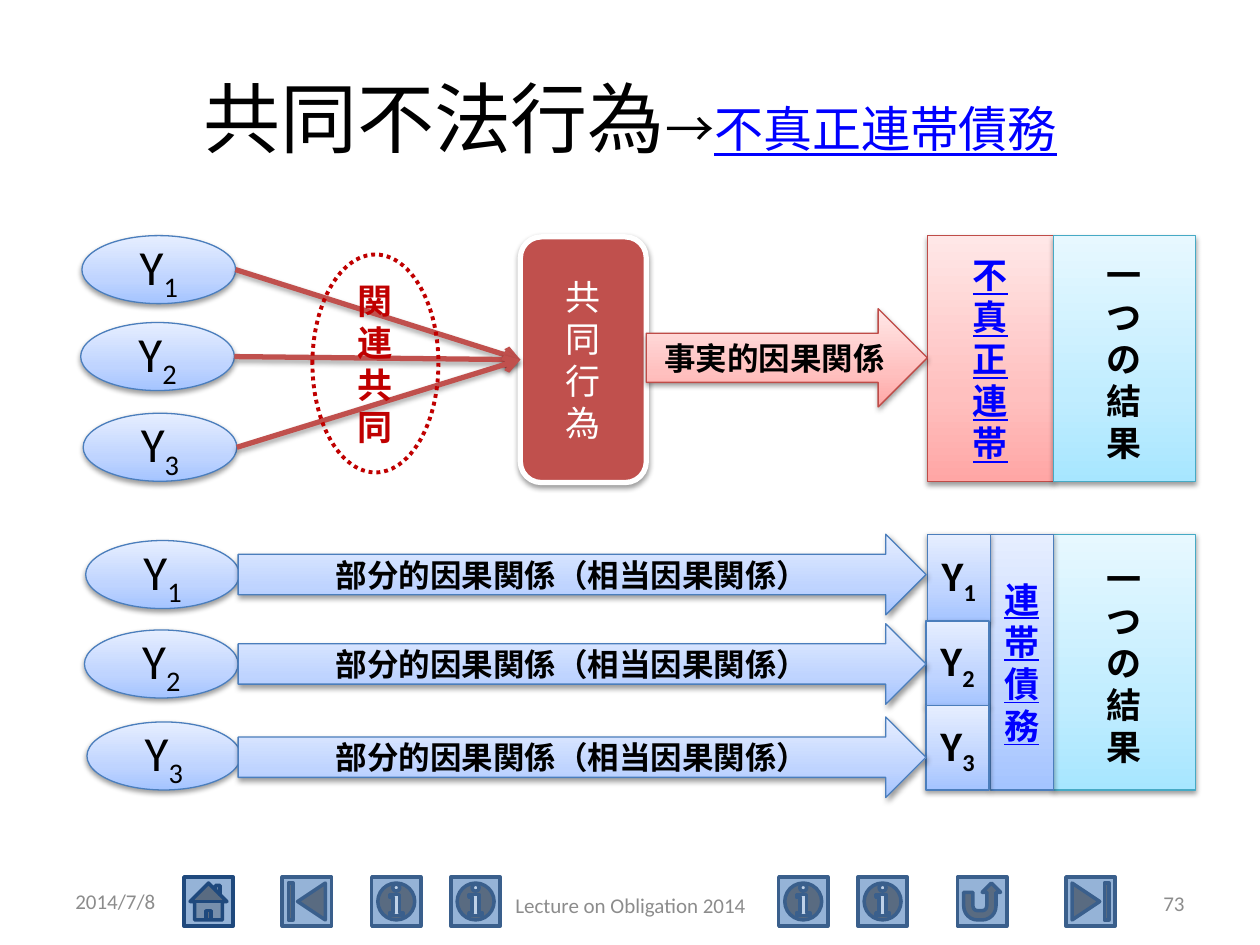
"""Build a slide comparing joint tort causation with partial causation."""
from dataclasses import dataclass
from typing import Optional

from pptx import Presentation
from pptx import util as u
from pptx.dml.color import RGBColor
from pptx.enum import dml, shapes, text
from pptx.oxml import parse_xml
from pptx.oxml.ns import nsdecls, qn

KIND = shapes.MSO_SHAPE
ALIGN = text.PP_ALIGN


@dataclass(frozen=True)
class Theme:
    font: str = "Calibri"
    black: str = "000000"
    white: str = "FFFFFF"
    link: str = "0000FF"
    muted: str = "8C8C8C"
    red: str = "C0504D"
    dark_red: str = "C00000"
    button: str = "95B3D7"
    button_line: str = "3A5F8C"
    home_line: str = "1F497D"
    title: int = 44
    subtitle: int = 28
    actor: int = 28
    share: int = 24
    body: int = 20
    label: int = 18
    footer: int = 12


@dataclass(frozen=True)
class Paint:
    """Fill stops from bottom to top, with an outline."""
    stops: tuple[str, ...]
    line: str
    width: float = 0.75
    dash: Optional[dml.MSO_LINE] = None
    shadow: bool = True


@dataclass(frozen=True)
class Words:
    """Label text with its type style and optional subscript."""
    content: str
    size: int
    color: str = Theme.black
    bold: bool = True
    underline: bool = False
    subscript: str = ""


@dataclass(frozen=True)
class Box:
    """Preset shape with place, paint and words."""
    kind: shapes.MSO_SHAPE
    left: float
    top: float
    width: float
    height: float
    paint: Paint
    words: Optional[Words] = None


THEME = Theme()
BLUE = Paint(("A4C4FF", "BFD4FF", "E6EEFF"), "4B7EBC")
PINK = Paint(("FFA6A5", "FFC0BF", "FFE7E7"), "BF4C48")
AQUA = Paint(("A7E6FF", "C1EDFF", "E7F8FF"), "46AAC5")
SOLID_RED = Paint((THEME.red,), THEME.white, 3)
DOTTED = Paint((), THEME.dark_red, 2.25, dml.MSO_LINE.ROUND_DOT, False)
BUTTON = Paint((THEME.button,), THEME.button_line, 2, shadow=False)
HOME = Paint((THEME.button,), THEME.home_line, 2, shadow=False)

BUTTONS = (
    (KIND.ACTION_BUTTON_HOME, 1.46, HOME),
    (KIND.ACTION_BUTTON_BEGINNING, 2.24, BUTTON),
    (KIND.ACTION_BUTTON_INFORMATION, 2.95, BUTTON),
    (KIND.ACTION_BUTTON_INFORMATION, 3.58, BUTTON),
    (KIND.ACTION_BUTTON_INFORMATION, 6.18, BUTTON),
    (KIND.ACTION_BUTTON_INFORMATION, 6.81, BUTTON),
    (KIND.ACTION_BUTTON_RETURN, 7.6, BUTTON),
    (KIND.ACTION_BUTTON_END, 8.46, BUTTON),
)
FOOTERS = (
    ("2014/7/8", 0.5, 6.95, 2.33, ALIGN.LEFT),
    ("Lecture on Obligation 2014", 3.42, 6.98, 3.17, ALIGN.CENTER),
    ("73", 7.17, 6.97, 2.33, ALIGN.RIGHT),
)
JOINT_ACTORS = ((0.65, 1.87), (0.64, 2.56), (0.66, 3.28))
PARTIAL_ACTORS = ((0.68, 4.29), (0.67, 5.0), (0.69, 5.73))
PARTIAL_ARROW_TOPS = (4.24, 4.95, 5.69)
SHARES = ((7.36, 4.24, 0.69), (7.35, 4.93, 0.67), (7.35, 5.6, 0.67))
ACTOR_WIDTH, ACTOR_HEIGHT = 1.22, 0.54


def style_run(run, size: int, color: str, bold=False, underline=False) -> None:
    """Format one run."""
    font = run.font
    font.name, font.size = THEME.font, u.Pt(size)
    font.bold, font.underline = bold, underline
    font.color.rgb = RGBColor.from_string(color)


def add_shadow(shape, opacity: int, distance: float) -> None:
    """Give a shape or connector a soft shadow straight below it."""
    properties = shape._element.spPr
    for effects in properties.findall(qn("a:effectLst")):
        properties.remove(effects)
    properties.append(parse_xml(
        f'<a:effectLst {nsdecls("a")}><a:outerShdw blurRad="{u.Pt(3.1)}" dist="{u.Pt(distance)}" '
        f'dir="5400000" rotWithShape="0"><a:srgbClr val="000000"><a:alpha val="{opacity * 1000}"/>'
        '</a:srgbClr></a:outerShdw></a:effectLst>'))


def apply_paint(shape, paint: Paint) -> None:
    """Apply fill, outline and shadow."""
    shape.shadow.inherit = False
    if not paint.stops:
        shape.fill.background()
    elif len(paint.stops) == 1:
        shape.fill.solid()
        shape.fill.fore_color.rgb = RGBColor.from_string(paint.stops[0])
    else:
        shape.fill.gradient()
        properties = shape._element.spPr
        stops = "".join(
            f'<a:gs pos="{position}"><a:srgbClr val="{color}"/></a:gs>'
            for position, color in zip((0, 35000, 100000), paint.stops))
        properties.replace(properties.find(qn("a:gradFill")), parse_xml(
            f'<a:gradFill {nsdecls("a")} rotWithShape="1"><a:gsLst>{stops}</a:gsLst>'
            '<a:lin ang="16200000" scaled="0"/></a:gradFill>'))
    shape.line.color.rgb = RGBColor.from_string(paint.line)
    shape.line.width = u.Pt(paint.width)
    if paint.dash:
        shape.line.dash_style = paint.dash
    if paint.shadow:
        add_shadow(shape, 38, 1.6)


def draw_box(slide, box: Box):
    """Draw a preset shape and its label."""
    shape = slide.shapes.add_shape(
        box.kind, *map(u.Inches, (box.left, box.top, box.width, box.height)))
    apply_paint(shape, box.paint)
    if box.words:
        words = box.words
        frame = shape.text_frame
        frame.vertical_anchor = text.MSO_ANCHOR.MIDDLE
        frame.word_wrap = not words.subscript
        paragraph = frame.paragraphs[0]
        paragraph.text = words.content.replace("\n", "\v")
        paragraph.alignment = ALIGN.CENTER
        if words.subscript:
            run = paragraph.add_run()
            run.text = words.subscript
            run._r.get_or_add_rPr().set("baseline", "-25000")
        for run in paragraph.runs:
            style_run(run, words.size, words.color, words.bold, words.underline)
    return shape


def draw_actor(slide, left: float, top: float, number: int) -> None:
    """Draw a numbered actor ellipse."""
    words = Words("Y", THEME.actor, bold=False, subscript=str(number))
    draw_box(slide, Box(KIND.OVAL, left, top, ACTOR_WIDTH, ACTOR_HEIGHT, BLUE, words))


def draw_link(slide, left: float, top: float, target) -> None:
    """Draw an arrow from an actor's right side to the joint act."""
    x, y = u.Inches(left + ACTOR_WIDTH), u.Inches(top + ACTOR_HEIGHT / 2)
    connector = slide.shapes.add_connector(shapes.MSO_CONNECTOR.STRAIGHT, x, y, x, y)
    connector.end_connect(target, 1)
    connector.line.color.rgb = RGBColor.from_string(THEME.red)
    connector.line.width = u.Pt(3)
    connector.line._get_or_add_ln().append(
        parse_xml(f'<a:tailEnd {nsdecls("a")} type="arrow"/>'))
    add_shadow(connector, 35, 1.8)


def draw_title(slide) -> None:
    """Fill the title placeholder."""
    title = slide.shapes.title
    title.left, title.top, title.width, title.height = map(u.Inches, (0.5, 0.3, 9, 1.25))
    title.text_frame.vertical_anchor = text.MSO_ANCHOR.MIDDLE
    paragraph = title.text_frame.paragraphs[0]
    paragraph.alignment = ALIGN.CENTER
    for content, size, color, underline in (
            ("共同不法行為", THEME.title, THEME.black, False),
            ("→", THEME.subtitle, THEME.black, False),
            ("不真正連帯債務", THEME.subtitle, THEME.link, True)):
        run = paragraph.add_run()
        run.text = content
        style_run(run, size, color, underline=underline)


def draw_footer(slide, content: str, left: float, top: float, width: float, alignment) -> None:
    """Draw one footer text."""
    frame = slide.shapes.add_textbox(*map(u.Inches, (left, top, width, 0.4))).text_frame
    frame.word_wrap = True
    frame.vertical_anchor = text.MSO_ANCHOR.MIDDLE
    frame.text = content
    frame.paragraphs[0].alignment = alignment
    style_run(frame.paragraphs[0].runs[0], THEME.footer, THEME.muted)


def draw_joint(slide) -> None:
    """Draw the upper flow: a joint act with one result."""
    for number, (left, top) in enumerate(JOINT_ACTORS, 1):
        draw_actor(slide, left, top, number)
    act = draw_box(slide, Box(KIND.ROUNDED_RECTANGLE, 4.13, 1.88, 1, 1.95, SOLID_RED,
                              Words("\n".join("共同行為"), THEME.body, THEME.white, False)))
    for left, top in JOINT_ACTORS:
        draw_link(slide, left, top, act)
    for box in (
            Box(KIND.RECTANGLE, 7.36, 1.87, 1, 1.95, PINK,
                Words("\n".join("不真正連帯"), THEME.body, THEME.link, underline=True)),
            Box(KIND.OVAL, 2.48, 2.02, 1, 1.73, DOTTED,
                Words("\n".join("関連共同"), THEME.body, THEME.dark_red)),
            Box(KIND.RIGHT_ARROW, 5.13, 2.45, 2.23, 0.78, PINK,
                Words("事実的因果関係", THEME.label))):
        draw_box(slide, box)


def draw_partial(slide) -> None:
    """Draw the lower flow: partial causes with shared liability."""
    draw_box(slide, Box(KIND.RECTANGLE, 7.86, 4.24, 0.5, 2.03, BLUE,
                        Words("連帯債務", THEME.body, THEME.link, underline=True)))
    for number, (left, top, height) in enumerate(SHARES, 1):
        draw_box(slide, Box(KIND.RECTANGLE, left, top, 0.5, height, BLUE,
                            Words("Y", THEME.share, subscript=str(number))))
    for number, (left, top) in enumerate(PARTIAL_ACTORS, 1):
        draw_actor(slide, left, top, number)
    for top in PARTIAL_ARROW_TOPS:
        draw_box(slide, Box(KIND.RIGHT_ARROW, 1.89, top, 5.46, 0.64, BLUE,
                            Words("部分的因果関係（相当因果関係）", THEME.label)))


def main() -> None:
    """Build and save the slide."""
    presentation = Presentation()
    presentation.slide_width, presentation.slide_height = u.Inches(10), u.Inches(7.5)
    slide = presentation.slides.add_slide(presentation.slide_layouts[5])
    for kind, left, paint in BUTTONS:
        draw_box(slide, Box(kind, left, 6.96, 0.39, 0.39, paint))
    draw_title(slide)
    for footer in FOOTERS:
        draw_footer(slide, *footer)
    draw_joint(slide)
    for top, height in ((1.87, 1.95), (4.24, 2.03)):
        draw_box(slide, Box(KIND.RECTANGLE, 8.36, top, 1.13, height, AQUA,
                            Words("\n".join("一つの結果"), THEME.body)))
    draw_partial(slide)
    presentation.save("out.pptx")


if __name__ == "__main__":
    main()
